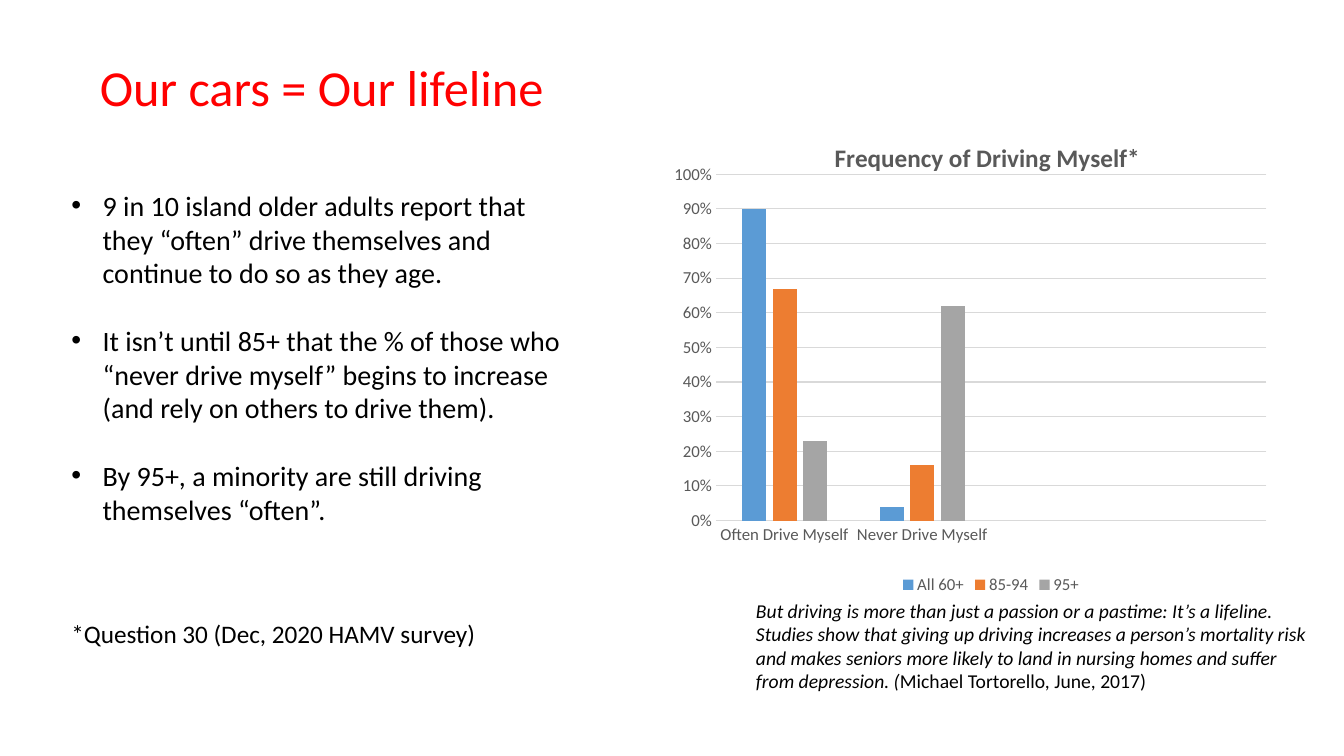
from dataclasses import dataclass

from lxml.etree import SubElement
from pptx import Presentation
from pptx.chart.data import CategoryChartData
from pptx.dml.color import RGBColor
from pptx.enum.chart import XL_CHART_TYPE as ChartType
from pptx.enum.chart import XL_LEGEND_POSITION as LegendPosition
from pptx.enum.chart import XL_TICK_MARK as TickMark
from pptx.enum.text import MSO_ANCHOR as Anchor
from pptx.enum.text import MSO_AUTO_SIZE as AutoSize
from pptx.enum.text import PP_ALIGN as Align
from pptx.oxml import parse_xml
from pptx.oxml.ns import nsdecls, qn
from pptx.util import Inches, Pt


@dataclass(frozen=True)
class Theme:
    font: str = "Calibri"
    red: str = "FF0000"
    black: str = "000000"
    grey: str = "595959"
    rule: str = "D9D9D9"
    series: tuple = ("5B9BD5", "ED7D31", "A5A5A5")
    title: int = 36
    body: int = 20
    note: int = 18
    quote: int = 14
    chart_title: int = 18
    label: int = 12


THEME = Theme()

BULLETS = (
    "9 in 10 island older adults report that they “often” drive themselves "
    "and continue to do so as they age.",
    "It isn’t until 85+ that the % of those who “never drive myself” begins "
    "to increase (and rely on others to drive them).",
    "By 95+, a minority are still driving themselves “often”.",
)
FOOTNOTE = "*Question 30 (Dec, 2020 HAMV survey)"
QUOTE = (
    "But driving is more than just a passion or a pastime: It’s a lifeline. "
    "Studies show that giving up driving increases a person’s mortality risk "
    "and makes seniors more likely to land in nursing homes and suffer from "
    "depression. ("
)
CREDIT = "Michael Tortorello, June, 2017)"
CATEGORIES = ("Often Drive Myself", "Never Drive Myself", "", "")
DRIVERS = {
    "All 60+": (0.9, 0.04, None, None),
    "85-94": (0.67, 0.16, None, None),
    "95+": (0.23, 0.62, None, None),
}


def style(font, size, color=THEME.black, bold=False, italic=False):
    font.name = THEME.font
    font.size = Pt(size)
    font.bold = bold
    font.italic = italic
    font.color.rgb = RGBColor.from_string(color)


def add_title(page, box):
    title = page.shapes.title
    title.left, title.top, title.width, title.height = map(Inches, box)
    frame = title.text_frame
    frame.text = "Our cars = Our lifeline"
    frame.auto_size = AutoSize.NONE
    frame.vertical_anchor = Anchor.TOP
    para = frame.paragraphs[0]
    para.alignment = Align.LEFT
    style(para.runs[0].font, THEME.title, THEME.red)


def add_text_frame(page, box):
    frame = page.shapes.add_textbox(*map(Inches, box)).text_frame
    frame.word_wrap = True
    return frame


def add_bullet(para):
    properties = para._p.get_or_add_pPr()
    properties.set("marL", str(Inches(0.31)))
    properties.set("indent", str(Inches(-0.31)))
    SubElement(properties, qn("a:buFont"), typeface="Arial")
    SubElement(properties, qn("a:buChar"), char="•")


def add_findings(page, box):
    frame = add_text_frame(page, box)
    frame.margin_top = Inches(0.36)
    frame.text = "\n".join((*BULLETS, FOOTNOTE))
    *findings, footnote = frame.paragraphs
    for para in findings:
        add_bullet(para)
        style(para.runs[0].font, THEME.body)
    for para in findings[1:]:
        para.space_before = Pt(24.4)
    footnote.space_before = Pt(66)
    style(footnote.runs[0].font, THEME.note)


def add_quote(page, box):
    para = add_text_frame(page, box).paragraphs[0]
    for text, italic in ((QUOTE, True), (CREDIT, False)):
        span = para.add_run()
        span.text = text
        style(span.font, THEME.quote, italic=italic)


def chart_layout(x, y, width=None, height=None):
    inner = '<c:layoutTarget val="inner"/>' if width else ""
    size = f'<c:w val="{width}"/><c:h val="{height}"/>' if width else ""
    return parse_xml(
        f'<c:layout {nsdecls("c")}><c:manualLayout>{inner}'
        '<c:xMode val="edge"/><c:yMode val="edge"/>'
        f'<c:x val="{x}"/><c:y val="{y}"/>{size}</c:manualLayout></c:layout>'
    )


def style_axes(chart):
    rule = RGBColor.from_string(THEME.rule)
    for axis in (chart.category_axis, chart.value_axis):
        axis.major_tick_mark = axis.minor_tick_mark = TickMark.NONE
        style(axis.tick_labels.font, THEME.label, THEME.grey)
    values = chart.value_axis
    values.minimum_scale, values.maximum_scale, values.major_unit = 0, 1, 0.1
    values.tick_labels.number_format = "0%"
    values.tick_labels.number_format_is_linked = False
    values.format.line.fill.background()
    for line in (chart.category_axis.format.line, values.major_gridlines.format.line):
        line.color.rgb = rule
        line.width = Pt(0.75)


def add_driving_chart(page, box):
    data = CategoryChartData(number_format="0%")
    data.categories = CATEGORIES
    for name, shares in DRIVERS.items():
        data.add_series(name, shares)
    chart = page.shapes.add_chart(
        ChartType.COLUMN_CLUSTERED, *map(Inches, box), data
    ).chart
    style(chart.font, THEME.label, THEME.grey)

    title = chart.chart_title
    title.text_frame.text = "Frequency of Driving Myself*"
    style(title.text_frame.paragraphs[0].runs[0].font,
          THEME.chart_title, THEME.grey, bold=True)
    title.include_in_layout = False
    for old in title._element.findall(qn("c:layout")):
        title._element.remove(old)
    title._element.find(qn("c:tx")).addnext(chart_layout(0.26, 0.05))

    plot = chart.plots[0]
    plot.gap_width, plot.overlap = 219, -27
    plot.vary_by_categories = False
    for series, color in zip(plot.series, THEME.series):
        series.format.fill.solid()
        series.format.fill.fore_color.rgb = RGBColor.from_string(color)
    area = chart._chartSpace.chart.plotArea
    for old in area.findall(qn("c:layout")):
        area.remove(old)
    area.insert(0, chart_layout(0.09, 0.13, 0.82, 0.71))
    style_axes(chart)

    chart.has_legend = True
    chart.legend.position = LegendPosition.BOTTOM
    chart.legend.include_in_layout = False
    style(chart.legend.font, THEME.label, THEME.grey)


def main():
    deck = Presentation()
    deck.slide_width, deck.slide_height = Inches(13.33), Inches(7.5)
    page = deck.slides.add_slide(deck.slide_layouts[5])
    add_title(page, (0.89, 0.51, 5.61, 0.71))
    add_findings(page, (0.61, 1.51, 5.2, 5.89))
    add_quote(page, (7.4, 5.89, 5.76, 1.28))
    add_driving_chart(page, (6.5, 1.1, 6.66, 4.84))
    deck.save("out.pptx")


if __name__ == "__main__":
    main()
